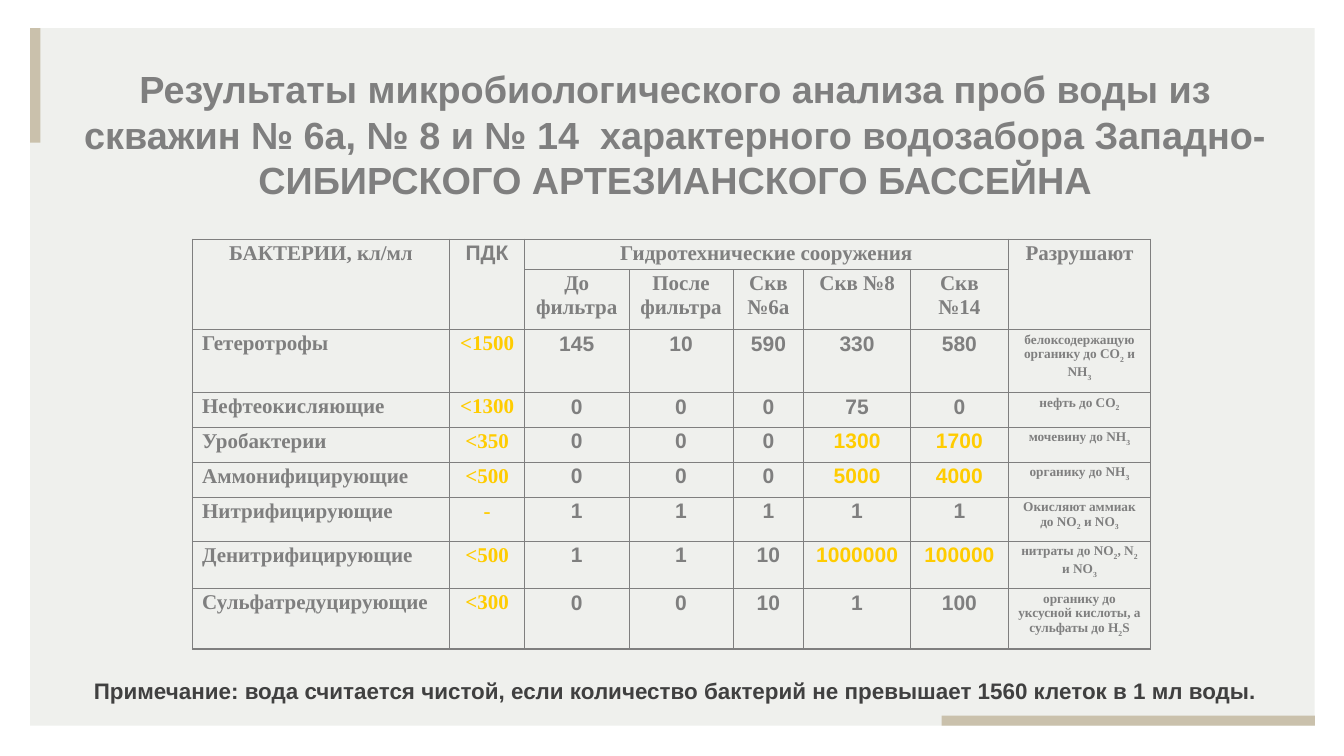
from lxml.etree import SubElement
from pptx import Presentation
from pptx.dml.color import RGBColor
from pptx.enum.shapes import MSO_SHAPE
from pptx.enum.text import MSO_ANCHOR, MSO_AUTO_SIZE, PP_ALIGN
from pptx.oxml.ns import qn
from pptx.util import Inches, Pt

WIDTH, HEIGHT = Inches(26.66), Inches(15)
PANEL, SAND, GREY, DARK, YELLOW = "EFF0ED", "CAC1AC", "7F7F7F", "404040", "FFCC00"
SANS, SERIF = "Arial", "Times New Roman"

TITLE = ("Результаты микробиологического анализа проб воды из скважин № 6а, № 8 и № 14  "
         "характерного водозабора Западно-СИБИРСКОГО АРТЕЗИАНСКОГО БАССЕЙНА")
NOTE = ("Примечание: вода считается чистой, если количество бактерий "
        "не превышает 1560 клеток в 1 мл воды.")

COL_WEIGHTS = [5.1, 1.49, 2.07, 2.07, 1.4, 2.12, 1.94, 2.83]
ROW_WEIGHTS = [0.6, 1.19, 1.25, 0.69, 0.69, 0.69, 0.88, 0.94, 1.2]
TOP_HEADS = {0: "БАКТЕРИИ, кл/мл", 1: "ПДК", 2: "Гидротехнические сооружения", 7: "Разрушают"}
SITES = ["До фильтра", "После фильтра", "Скв №6а", "Скв №8", "Скв №14"]
# name, limit, counts per site, what the bacteria destroy ("_" marks a subscript digit)
BACTERIA = [
    ("Гетеротрофы", "<1500", [145, 10, 590, 330, 580], "белоксодержащую органику до СО_2 и NH_3"),
    ("Нефтеокисляющие", "<1300", [0, 0, 0, 75, 0], "нефть до СО_2"),
    ("Уробактерии", "<350", [0, 0, 0, 1300, 1700], "мочевину до NH_3"),
    ("Аммонифицирующие", "<500", [0, 0, 0, 5000, 4000], "органику до NH_3"),
    ("Нитрифицирующие", "-", [1, 1, 1, 1, 1], "Окисляют аммиак до NO_2 и NO_3"),
    ("Денитрифицирующие", "<500", [1, 1, 10, 1000000, 100000], "нитраты до NO_2, N_2 и NO_3"),
    ("Сульфатредуцирующие", "<300", [0, 0, 10, 1, 100],
     "органику до уксусной кислоты, а сульфаты до H_2S"),
]


def rgb(color):
    return RGBColor.from_string(color)


def box(x, y, w, h):
    """Turn percentages of the slide's width and height into lengths."""
    return (int(WIDTH * x / 100), int(HEIGHT * y / 100),
            int(WIDTH * w / 100), int(HEIGHT * h / 100))


def add_run(p, text, size, font, color, subscript=False):
    r = p.add_run()
    r.text = text
    for name, value in {"size": Pt(size), "name": font, "bold": True}.items():
        setattr(r.font, name, value)
    r.font.color.rgb = rgb(color)
    if subscript:
        r.font._element.set("baseline", "-30000")


def write(tf, text, size, font, color, align=PP_ALIGN.CENTER):
    """Fill the first paragraph, lowering each digit that follows "_"."""
    tf.word_wrap = True
    p = tf.paragraphs[0]
    p.alignment = align
    first, *rest = text.split("_")
    add_run(p, first, size, font, color)
    for part in rest:
        add_run(p, part[0], size, font, color, subscript=True)
        if part[1:]:
            add_run(p, part[1:], size, font, color)


def add_bar(s, place, color):
    sp = s.shapes.add_shape(MSO_SHAPE.RECTANGLE, *box(*place))
    sp.shadow.inherit = False
    sp.fill.solid()
    sp.fill.fore_color.rgb = rgb(color)
    sp.line.fill.background()


def add_title(s):
    sp = s.shapes.title
    s.shapes.element.append(sp.element)  # bring in front of the panel
    sp.left, sp.top, sp.width, sp.height = box(5.14, 8.4, 90.21, 18.67)
    tf = sp.text_frame
    tf.auto_size = MSO_AUTO_SIZE.NONE
    tf.vertical_anchor = MSO_ANCHOR.MIDDLE
    write(tf, TITLE, 54, SANS, GREY)


def add_note(s):
    sp = s.shapes.add_textbox(*box(5.14, 89.2, 90.21, 4.2))
    write(sp.text_frame, NOTE, 32, SANS, DARK)


def set_borders(cell, outer):
    """Draw the four sides, heavier on those named in outer."""
    tcPr = cell._tc.get_or_add_tcPr()
    for side in "LRTB":
        width = Pt(2.21 if side in outer else 0.96)
        ln = SubElement(tcPr, qn(f"a:ln{side}"), w=str(width))
        fill = SubElement(ln, qn("a:solidFill"))
        SubElement(fill, qn("a:srgbClr"), val=GREY)


def fill_cells(table):
    for col, head in TOP_HEADS.items():
        write(table.cell(0, col).text_frame, head, 30, SANS if col == 1 else SERIF, GREY)
    for col, site in enumerate(SITES, 2):
        write(table.cell(1, col).text_frame, site, 30, SERIF, GREY)
    for row, (name, limit, counts, target) in enumerate(BACTERIA, 2):
        write(table.cell(row, 0).text_frame, name, 30, SERIF, GREY, PP_ALIGN.LEFT)
        write(table.cell(row, 1).text_frame, limit, 30, SERIF, YELLOW)
        highest = float(limit[1:] or "inf")
        for col, count in enumerate(counts, 2):
            color = YELLOW if count > highest else GREY
            write(table.cell(row, col).text_frame, str(count), 30, SANS, color)
        write(table.cell(row, 7).text_frame, target, 19, SERIF, GREY)


def add_results(s):
    n_rows, n_cols = len(ROW_WEIGHTS), len(COL_WEIGHTS)
    left, top, width, height = box(14.33, 31.67, 71.3, 54.2)
    table = s.shapes.add_table(n_rows, n_cols, left, top, width, height).table
    table.first_row = table.horz_banding = False
    for column, weight in zip(table.columns, COL_WEIGHTS):
        column.width = int(width * weight / sum(COL_WEIGHTS))
    for row, weight in zip(table.rows, ROW_WEIGHTS):
        row.height = int(height * weight / sum(ROW_WEIGHTS))
    for col in (0, 1, 7):
        table.cell(0, col).merge(table.cell(1, col))
    table.cell(0, 2).merge(table.cell(0, 6))

    for i in range(n_rows):
        for j in range(n_cols):
            cell = table.cell(i, j)
            if not cell.is_spanned:
                edges = {"L": j == 0, "R": j == n_cols - 1, "T": i == 0, "B": i == n_rows - 1}
                set_borders(cell, [side for side, at_edge in edges.items() if at_edge])
            cell.fill.background()
            cell.margin_left = cell.margin_right = Inches(0.19 if i else 0.1)
    fill_cells(table)


def main():
    prs = Presentation()
    prs.slide_width, prs.slide_height = WIDTH, HEIGHT
    s = prs.slides.add_slide(prs.slide_layouts[5])
    add_bar(s, (2.25, 3.73, 95.57, 92.27), PANEL)
    add_bar(s, (2.25, 3.73, 0.75, 15.13), SAND)
    add_bar(s, (70.07, 94.67, 27.76, 1.33), SAND)
    add_title(s)
    add_note(s)
    add_results(s)
    prs.save("out.pptx")


if __name__ == "__main__":
    main()
